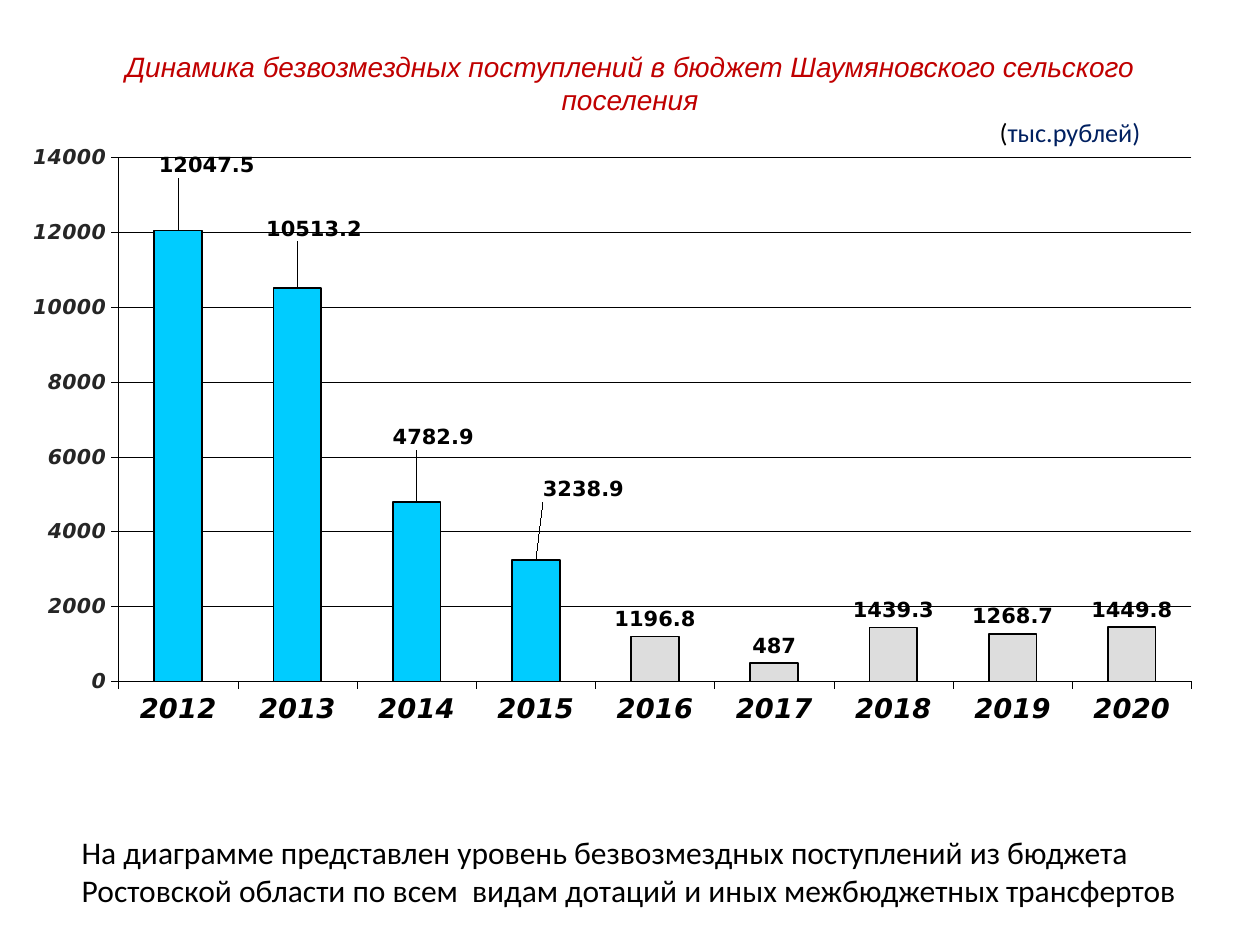
from dataclasses import dataclass

from pptx import Presentation
from pptx.chart.data import CategoryChartData
from pptx.dml.color import RGBColor
from pptx.enum.chart import XL_CHART_TYPE, XL_LABEL_POSITION, XL_TICK_MARK
from pptx.enum.text import PP_ALIGN
from pptx.oxml import parse_xml
from pptx.oxml.ns import nsdecls
from pptx.util import Inches, Pt


@dataclass(frozen=True)
class Theme:
    black: RGBColor = RGBColor(0x00, 0x00, 0x00)
    title: RGBColor = RGBColor(0xC0, 0x00, 0x00)
    unit: RGBColor = RGBColor(0x00, 0x20, 0x60)
    axis: RGBColor = RGBColor(0x26, 0x26, 0x26)
    past_bar: RGBColor = RGBColor(0x00, 0xCC, 0xFF)
    bar: RGBColor = RGBColor(0xDD, 0xDD, 0xDD)
    title_font: str = "Arial"
    body_font: str = "Calibri"
    chart_font: str = "DejaVu Sans"
    title_size: float = 16
    unit_size: float = 15
    note_size: float = 18
    year_size: float = 15.6
    value_size: float = 11.7
    label_size: float = 12


@dataclass(frozen=True)
class Receipt:
    year: str
    amount: float
    label_shift: tuple[float, float] | None = None


THEME = Theme()
RECEIPTS = [
    Receipt("2012", 12047.5, (0.024, -0.08)),
    Receipt("2013", 10513.2, (0.014, -0.07)),
    Receipt("2014", 4782.9, (0.014, -0.08)),
    Receipt("2015", 3238.9, (0.04, -0.09)),
    Receipt("2016", 1196.8),
    Receipt("2017", 487),
    Receipt("2018", 1439.3),
    Receipt("2019", 1268.7),
    Receipt("2020", 1449.8),
]


def set_font(font, name: str, size: float, color: RGBColor, bold=False, italic=False) -> None:
    font.name = name
    font.size = Pt(size)
    font.bold = bold
    font.italic = italic
    font.color.rgb = color


def set_line(line, width: float) -> None:
    line.color.rgb = THEME.black
    line.width = Pt(width)


def manual_layout(x: float, y: float, inner_size: tuple[float, float] | None = None):
    target = modes = size = ""
    if inner_size:
        target = '<c:layoutTarget val="inner"/>'
        modes = '<c:xMode val="edge"/><c:yMode val="edge"/>'
        size = f'<c:w val="{inner_size[0]}"/><c:h val="{inner_size[1]}"/>'
    return parse_xml(
        f'<c:layout {nsdecls("c")}><c:manualLayout>{target}{modes}'
        f'<c:x val="{x}"/><c:y val="{y}"/>{size}</c:manualLayout></c:layout>'
    )


def add_text_frame(slide, left: float, top: float, width: float, height: float):
    shape = slide.shapes.add_textbox(Inches(left), Inches(top), Inches(width), Inches(height))
    shape.text_frame.word_wrap = True
    return shape.text_frame


def add_title(slide) -> None:
    frame = add_text_frame(slide, 0.63, 0.31, 8.74, 1.18)
    frame.margin_top = Inches(0.08)
    heading = frame.paragraphs[0]
    heading.text = "Динамика безвозмездных поступлений в бюджет Шаумяновского сельского поселения"
    heading.alignment = PP_ALIGN.CENTER
    set_font(heading.font, THEME.title_font, THEME.title_size, THEME.title, italic=True)
    unit = frame.add_paragraph()
    unit.alignment = PP_ALIGN.RIGHT
    unit._p.get_or_add_pPr().set("marR", str(Inches(0.22)))
    for text, color in (("(", THEME.black), ("тыс.рублей)", THEME.unit)):
        run = unit.add_run()
        run.text = text
        set_font(run.font, THEME.body_font, THEME.unit_size, color)


def style_axis(axis, size: float, color: RGBColor) -> None:
    set_font(axis.tick_labels.font, THEME.chart_font, size, color, bold=True, italic=True)
    set_line(axis.format.line, 0.25)
    axis.major_tick_mark = XL_TICK_MARK.OUTSIDE
    axis.minor_tick_mark = XL_TICK_MARK.NONE


def style_label(label) -> None:
    set_font(label.font, THEME.chart_font, THEME.label_size, THEME.black, bold=True)
    label.position = XL_LABEL_POSITION.OUTSIDE_END


def add_receipts_chart(slide, receipts: list[Receipt]) -> None:
    data = CategoryChartData()
    data.categories = [receipt.year for receipt in receipts]
    data.add_series("Series 1", [receipt.amount for receipt in receipts])
    chart = slide.shapes.add_chart(
        XL_CHART_TYPE.COLUMN_CLUSTERED,
        Inches(0.12), Inches(1.15), Inches(9.44), Inches(4.71), data,
    ).chart
    chart.has_legend = False
    chart.has_title = False
    set_font(chart.font, THEME.chart_font, THEME.label_size, THEME.black, bold=True)

    plot_area = chart.element.xpath(".//c:plotArea")[0]
    for layout in plot_area.xpath("./c:layout"):
        plot_area.remove(layout)
    plot_area.insert(0, manual_layout(0.087, 0.017, (0.902, 0.887)))

    style_axis(chart.category_axis, THEME.year_size, THEME.black)
    value_axis = chart.value_axis
    style_axis(value_axis, THEME.value_size, THEME.axis)
    value_axis.minimum_scale, value_axis.maximum_scale = 0, 14000
    value_axis.major_unit = 2000
    value_axis.has_major_gridlines = True
    set_line(value_axis.major_gridlines.format.line, 0.25)

    plot = chart.plots[0]
    plot.gap_width = 150
    plot.vary_by_categories = False
    series = plot.series[0]
    series.format.fill.solid()
    series.format.fill.fore_color.rgb = THEME.bar
    set_line(series.format.line, 0.98)
    series.data_labels.show_value = True
    style_label(series.data_labels)

    shifted = [(index, receipt) for index, receipt in enumerate(receipts) if receipt.label_shift]
    for index, receipt in shifted:
        point = series.points[index]
        point.format.fill.solid()
        point.format.fill.fore_color.rgb = THEME.past_bar
        set_line(point.format.line, 0.98)
        style_label(point.data_label)
    for label, (_, receipt) in zip(chart.element.xpath(".//c:dLbl"), shifted):
        label.insert(1, manual_layout(*receipt.label_shift))


def add_note(slide) -> None:
    paragraph = add_text_frame(slide, 0.55, 6.56, 9.06, 0.71).paragraphs[0]
    paragraph.text = (
        "На диаграмме представлен уровень безвозмездных поступлений из бюджета "
        "Ростовской области по всем  видам дотаций и иных межбюджетных трансфертов"
    )
    set_font(paragraph.font, THEME.body_font, THEME.note_size, THEME.black)


def main() -> None:
    presentation = Presentation()
    presentation.slide_width = Inches(10)
    presentation.slide_height = Inches(7.5)
    slide = presentation.slides.add_slide(presentation.slide_layouts[6])
    add_title(slide)
    add_receipts_chart(slide, RECEIPTS)
    add_note(slide)
    presentation.save("out.pptx")


if __name__ == "__main__":
    main()
